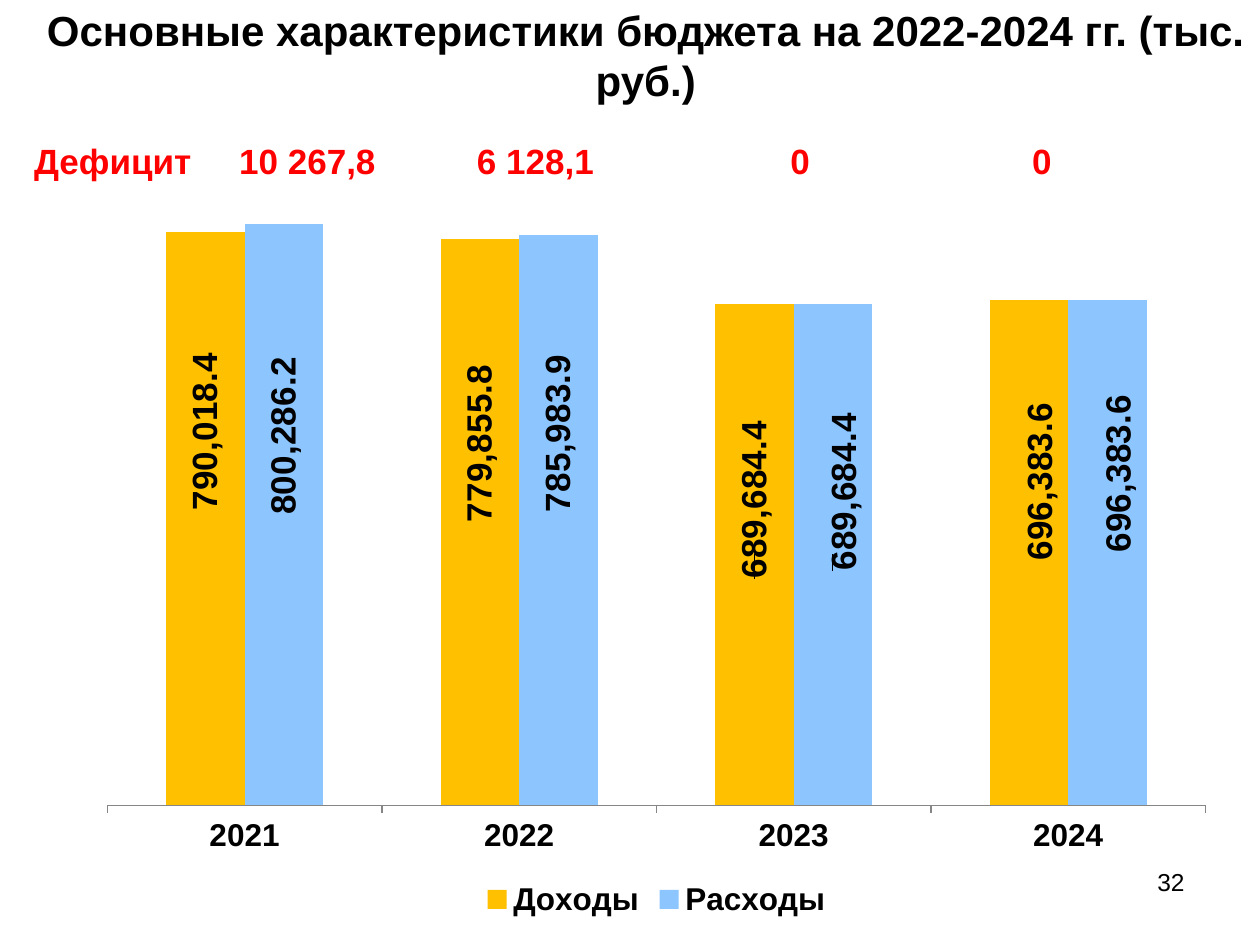
from lxml import etree
from pptx import Presentation
from pptx.chart.data import CategoryChartData
from pptx.dml.color import RGBColor
from pptx.enum.chart import XL_CHART_TYPE, XL_LABEL_POSITION, XL_LEGEND_POSITION, XL_TICK_LABEL_POSITION, XL_TICK_MARK
from pptx.enum.text import MSO_ANCHOR, PP_ALIGN
from pptx.oxml import parse_xml
from pptx.oxml.ns import nsdecls, qn
from pptx.util import Inches, Pt

CENTER, LEFT, RIGHT = PP_ALIGN.CENTER, PP_ALIGN.LEFT, PP_ALIGN.RIGHT
FONT = "Arial"
NUMBER_FORMAT = "#,##0.0"

TITLE = "Основные характеристики бюджета на 2022-2024 гг. (тыс. руб.)"
PAGE_NUMBER = "32"
DEFICIT = [("Дефицит", 1.54), ("10 267,8", 1.46), ("6 128,1", 2.16), ("0", 2.04), ("0", 1.8)]
YEARS = ["2021", "2022", "2023", "2024"]
# Label shifts are (x, y) shares of the chart, measured from the bar's centre.
SERIES = [
    {"name": "Доходы", "color": "FFC000",
     "values": [790018.4, 779855.8, 689684.4, 696383.6],
     "shifts": [(0, -0.11), (0, -0.1), (0, -0.07), (0.01, -0.09)]},
    {"name": "Расходы", "color": "8DC6FF",
     "values": [800286.2, 785983.9, 689684.4, 696383.6],
     "shifts": [(0, -0.1), (0, -0.11), (0.01, -0.08), (0.01, -0.1)]},
]
PLOT_AREA = {"x": 0.02, "y": 0.02, "w": 0.96, "h": 0.83}


def rgb(color):
    return RGBColor.from_string(color)


def style_font(font, size, color="000000", bold=False):
    font.name, font.size, font.bold = FONT, Pt(size), bold
    font.color.rgb = rgb(color)


def write(frame, text, size, align, color="000000", bold=False):
    frame.text = text
    para = frame.paragraphs[0]
    para.alignment = align
    style_font(para.runs[0].font, size, color, bold)


def manual_layout(modes, lengths):
    """Build a c:layout element from mode and length settings."""
    layout = parse_xml(f"<c:layout {nsdecls('c')}><c:manualLayout/></c:layout>")
    for tag, value in {**modes, **lengths}.items():
        etree.SubElement(layout[0], qn(f"c:{tag}")).set("val", str(value))
    return layout


def style_series(series, content):
    series.format.fill.solid()
    series.format.fill.fore_color.rgb = rgb(content["color"])
    series.invert_if_negative = False
    for index, (x, y) in enumerate(content["shifts"]):
        label = series.points[index].data_label
        style_font(label.font, 20, bold=True)
        label.position = XL_LABEL_POSITION.CENTER
        element = series._element.findall(".//" + qn("c:dLbl"))[index]
        element.find(qn("c:idx")).addnext(manual_layout({}, {"x": x, "y": y}))
        body = element.find(".//" + qn("a:bodyPr"))
        body.set("rot", "-5400000")
        body.set("vert", "horz")
    labels = series.data_labels
    labels.show_value = True
    labels.number_format, labels.number_format_is_linked = NUMBER_FORMAT, False
    style_font(labels.font, 20, bold=True)


def add_budget_chart(page):
    data = CategoryChartData(number_format=NUMBER_FORMAT)
    data.categories = YEARS
    for content in SERIES:
        data.add_series(content["name"], content["values"])
    chart = page.shapes.add_chart(
        XL_CHART_TYPE.COLUMN_CLUSTERED,
        Inches(0.67), Inches(1.08), Inches(9.08), Inches(6.25), data).chart
    style_font(chart.font, 18)
    chart.has_title = False

    plot = chart.plots[0]
    plot.gap_width, plot.overlap, plot.vary_by_categories = 150, 0, False
    for series, content in zip(plot.series, SERIES):
        style_series(series, content)

    years = chart.category_axis
    years.major_tick_mark = XL_TICK_MARK.OUTSIDE
    years.tick_label_position = XL_TICK_LABEL_POSITION.LOW
    years.format.line.color.rgb = rgb("868686")
    style_font(years.tick_labels.font, 18, bold=True)

    amounts = chart.value_axis
    amounts.minimum_scale, amounts.maximum_scale = 200, 900000
    amounts.has_major_gridlines = False
    amounts.visible = False

    chart.has_legend = True
    chart.legend.position = XL_LEGEND_POSITION.BOTTOM
    chart.legend.include_in_layout = False
    style_font(chart.legend.font, 18, bold=True)

    area = chart._chartSpace.find(".//" + qn("c:plotArea"))
    for layout in area.findall(qn("c:layout")):
        area.remove(layout)
    modes = {"layoutTarget": "inner", "xMode": "edge", "yMode": "edge"}
    area.insert(0, manual_layout(modes, PLOT_AREA))


def add_deficit_row(page):
    table = page.shapes.add_table(
        1, len(DEFICIT), Inches(0.17), Inches(1.08), Inches(9), Inches(0.42)).table
    table.first_row = table.horz_banding = False
    for index, (text, width) in enumerate(DEFICIT):
        table.columns[index].width = Inches(width)
        cell = table.cell(0, index)
        write(cell.text_frame, text, 20, CENTER if index else LEFT, "FF0000", True)
        cell.fill.solid()
        cell.fill.fore_color.rgb = rgb("FFFFFF")


def main():
    deck = Presentation()
    deck.slide_width, deck.slide_height = Inches(10), Inches(7.5)
    page = deck.slides.add_slide(deck.slide_layouts[5])

    title = page.shapes.title
    title.left, title.top = Inches(0.25), Inches(0.25)
    title.width, title.height = Inches(9.75), Inches(0.37)
    write(title.text_frame, TITLE, 24, CENTER, bold=True)
    title.text_frame.vertical_anchor = MSO_ANCHOR.MIDDLE

    add_budget_chart(page)

    number = page.shapes.add_textbox(Inches(7.17), Inches(6.83), Inches(2.33), Inches(0.52))
    number.text_frame.word_wrap = True
    write(number.text_frame, PAGE_NUMBER, 14, RIGHT)

    add_deficit_row(page)
    deck.save("out.pptx")


if __name__ == "__main__":
    main()
